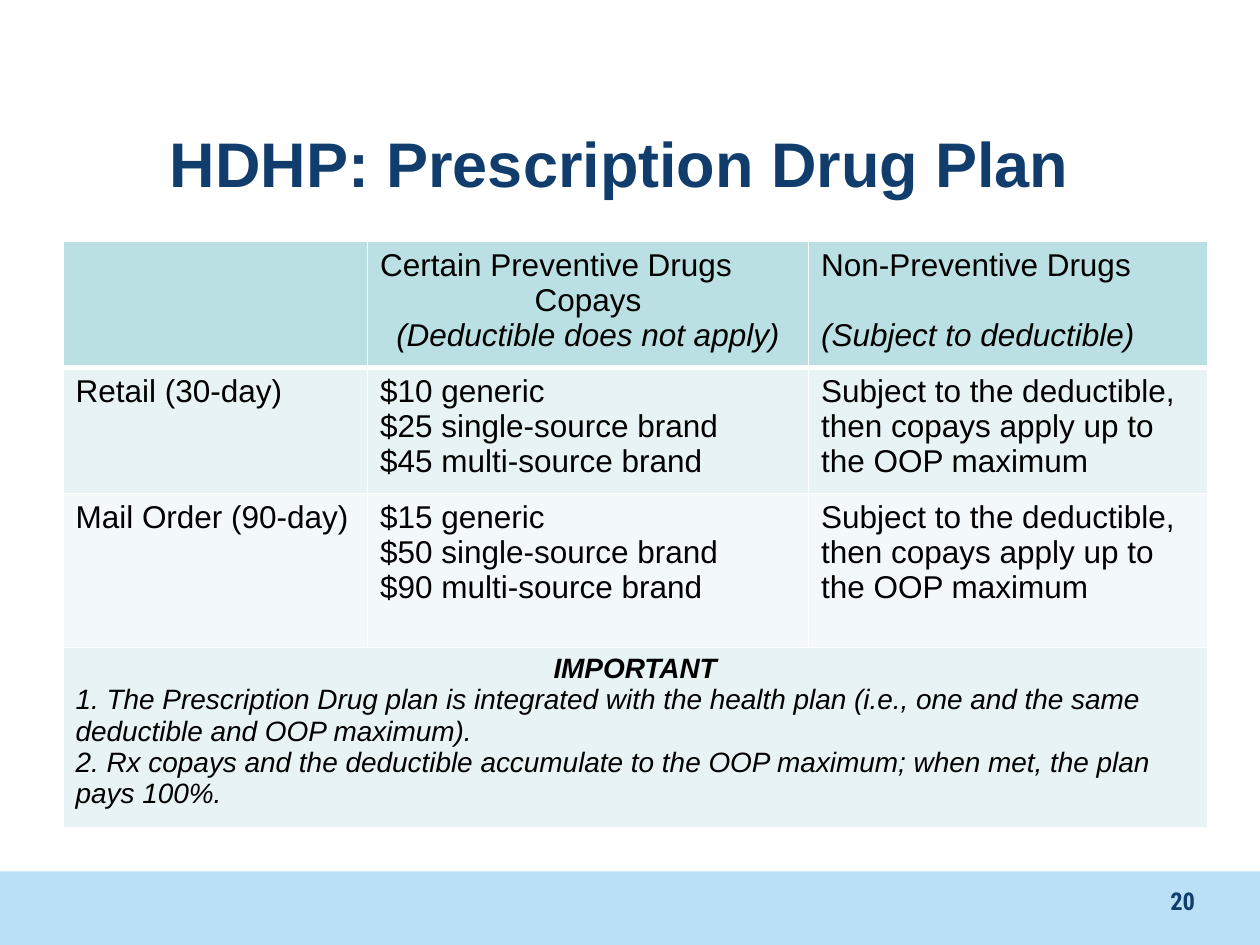
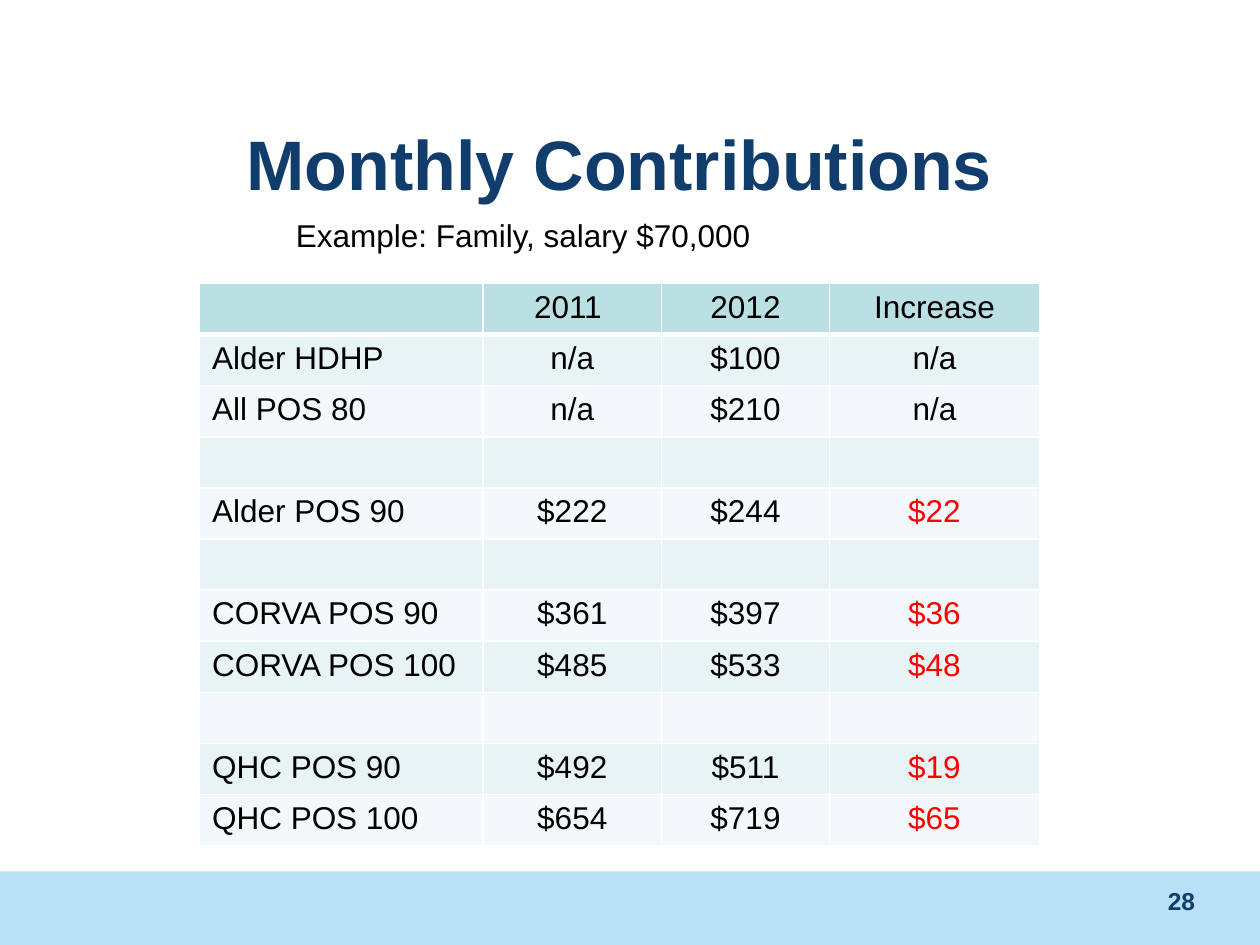
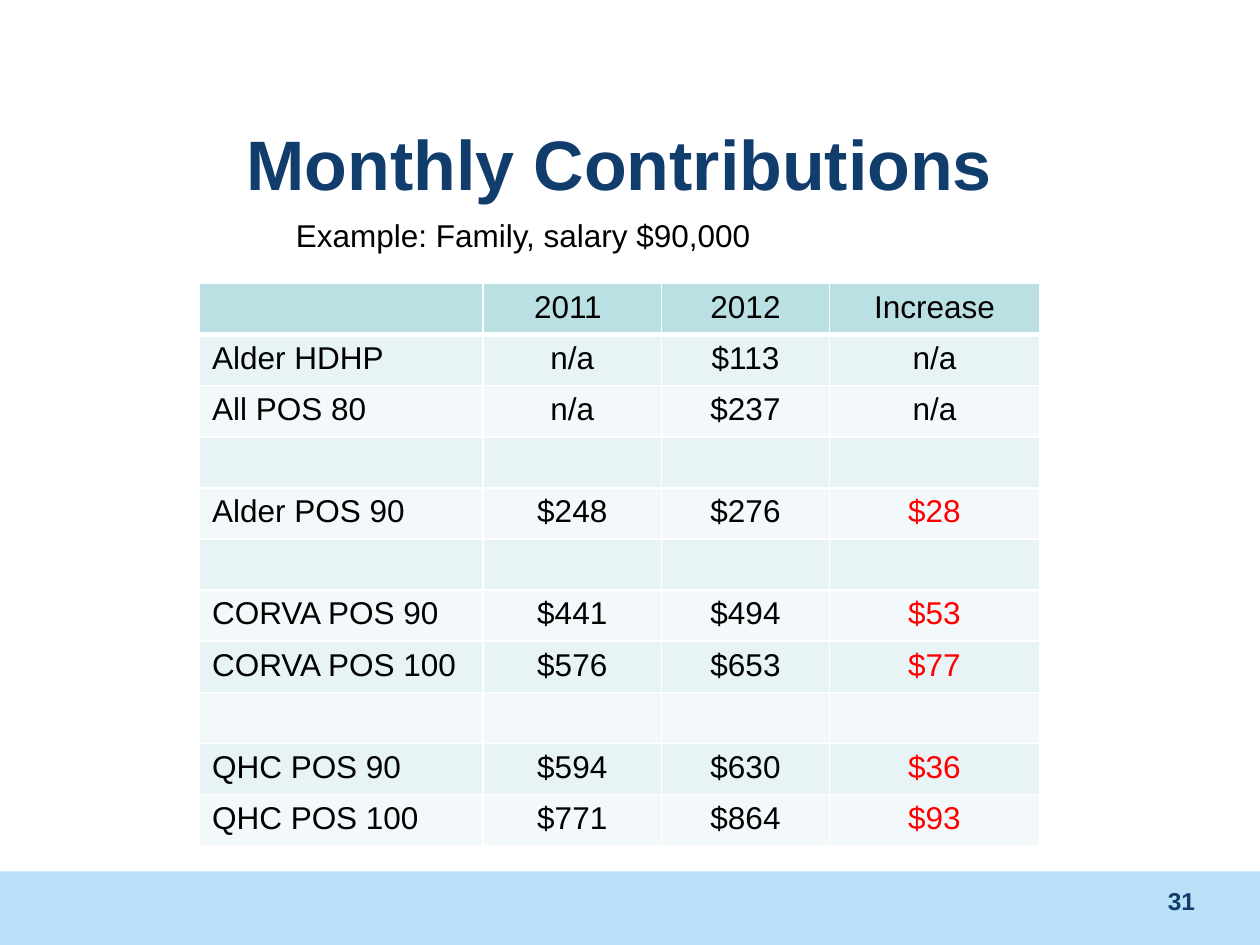
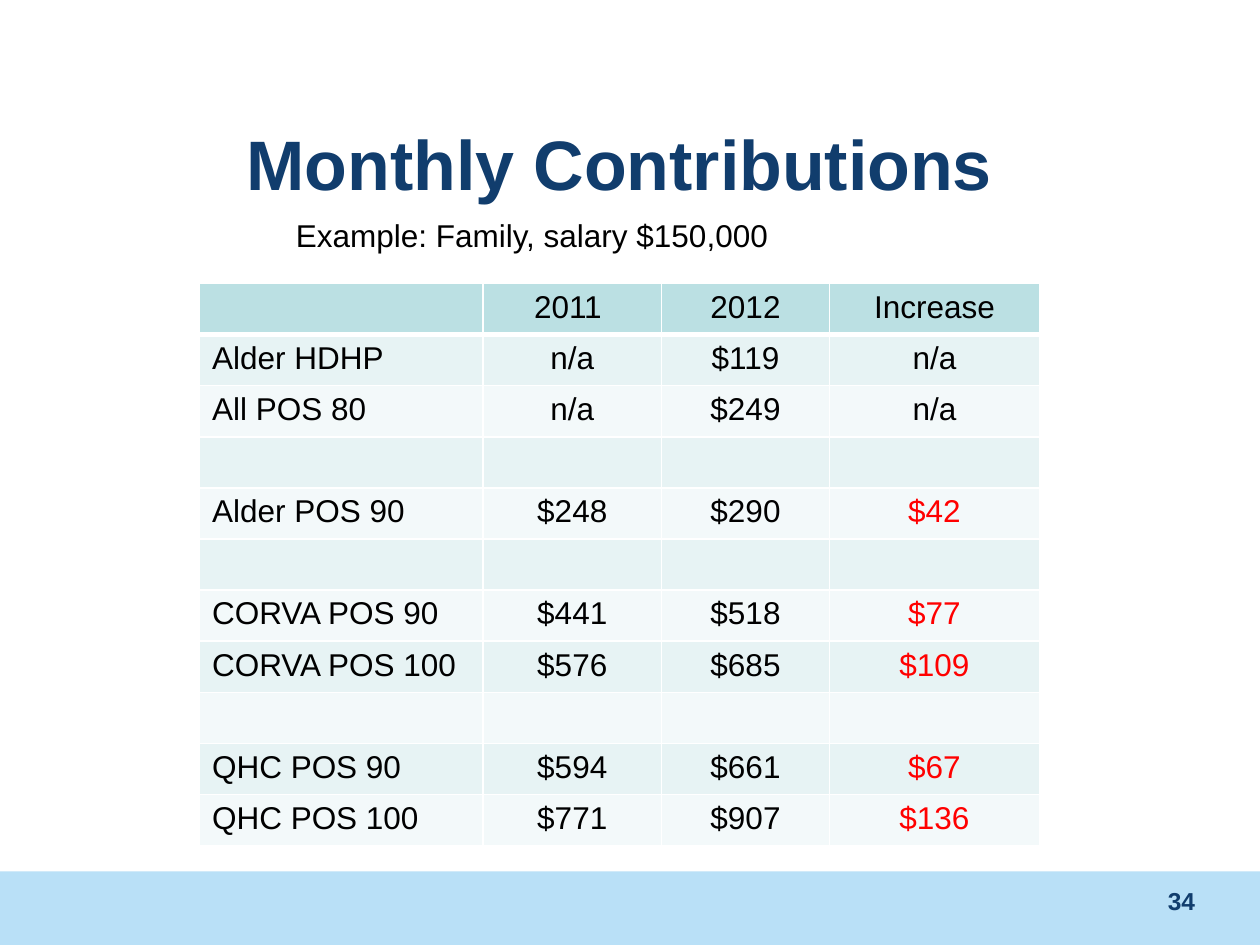
"""Build four benefit-plan slides: a drug plan table and three contribution tables."""
from dataclasses import dataclass

from lxml import etree
from pptx import Presentation
from pptx import util as u
from pptx.dml.color import RGBColor
from pptx.enum import shapes, text
from pptx.oxml import ns

COLORS = {
    "navy": "113D6D",
    "band": "B9E0F7",
    "header": "BBE0E3",
    "odd": "E7F3F4",
    "even": "F3F9FA",
    "rule": "FFFFFF",
    "body": "000000",
    "rise": "FF0000",
}
COLUMNS, ROWS = 120, 90
UNIT = u.Inches(10) // COLUMNS
FONT = "Arial"
LEFT, CENTER, RIGHT = text.PP_ALIGN.LEFT, text.PP_ALIGN.CENTER, text.PP_ALIGN.RIGHT

PLANS = ["Alder HDHP", "All POS 80", None, "Alder POS 90", None, "CORVA POS 90",
         "CORVA POS 100", None, "QHC POS 90", "QHC POS 100"]
CONTRIBUTIONS = [
    (28, "$70,000", [None, None, 222, 361, 485, 492, 654], [100, 210, 244, 397, 533, 511, 719]),
    (31, "$90,000", [None, None, 248, 441, 576, 594, 771], [113, 237, 276, 494, 653, 630, 864]),
    (34, "$150,000", [None, None, 248, 441, 576, 594, 771], [119, 249, 290, 518, 685, 661, 907]),
]


@dataclass
class Line:
    """One paragraph and its look."""
    words: str
    align: int = LEFT
    size: int = 18
    color: str = "body"
    bold: bool = False
    italic: bool = False
    font: str = FONT
    before: int = 0


def grid(*cells):
    """Turn grid units into lengths."""
    return [u.Emu(round(cell * UNIT)) for cell in cells]


def rgb(name):
    """Look up a colour by name."""
    return RGBColor.from_string(COLORS[name])


def write(frame, lines):
    """Fill a text frame with one paragraph per line."""
    for index, line in enumerate(lines):
        para = frame.add_paragraph() if index else frame.paragraphs[0]
        para.text = line.words
        para.alignment = line.align
        if line.before:
            para.space_before = u.Pt(line.before)
        font = para.font
        font.name, font.size = line.font, u.Pt(line.size)
        font.bold, font.italic = line.bold, line.italic
        font.color.rgb = rgb(line.color)


def add_text(page, place, line, anchor=text.MSO_ANCHOR.TOP):
    """Add a wrapping text box with one line."""
    frame = page.shapes.add_textbox(*grid(*place)).text_frame
    frame.word_wrap = True
    frame.vertical_anchor = anchor
    write(frame, [line])


def add_page(deck, title, title_size, number, number_font=FONT):
    """Add a slide with the shared band, title and page number."""
    page = deck.slides.add_slide(deck.slide_layouts[6])
    band = page.shapes.add_shape(shapes.MSO_SHAPE.RECTANGLE, *grid(0, 83, COLUMNS, 7))
    band.shadow.inherit = False
    band.fill.solid()
    band.fill.fore_color.rgb = rgb("band")
    band.line.fill.background()
    add_text(page, (5, 8, 108, 15), Line(title, CENTER, title_size, "navy", True),
             text.MSO_ANCHOR.MIDDLE)
    add_text(page, (87, 83.75, 28, 6.25),
             Line(str(number), RIGHT, 14, "navy", True, font=number_font))
    return page


def add_borders(cell, bottom):
    """Draw white rules round a cell, with the given width below."""
    properties = cell._tc.get_or_add_tcPr()
    for index, (side, points) in enumerate(zip("LRTB", (1, 1, 1, bottom))):
        rule = etree.Element(ns.qn(f"a:ln{side}"), w=str(u.Pt(points)))
        fill = etree.SubElement(rule, ns.qn("a:solidFill"))
        etree.SubElement(fill, ns.qn("a:srgbClr"), val=COLORS["rule"])
        properties.insert(index, rule)


def add_table(page, left, top, widths, heights, rows):
    """Add a banded table from rows of cells, each a list of lines."""
    place = grid(left, top, sum(widths), sum(heights))
    table = page.shapes.add_table(len(heights), len(widths), *place).table
    table.first_row = table.horz_banding = False
    for column, width in zip(table.columns, grid(*widths)):
        column.width = width
    for index, (row, height, lines) in enumerate(zip(table.rows, grid(*heights), rows)):
        row.height = height
        shade = "header" if index == 0 else "odd" if index % 2 else "even"
        for cell, content in zip(row.cells, lines):
            cell.fill.solid()
            cell.fill.fore_color.rgb = rgb(shade)
            add_borders(cell, 1 if index else 3)
            write(cell.text_frame, content)
    return table


def drug_page(deck):
    """Add the prescription drug plan slide."""
    page = add_page(deck, "HDHP: Prescription Drug Plan", 36, 20, "Roboto Condensed")
    subject = [Line("Subject to the deductible, then copays apply up to the OOP maximum")]

    def copays(generic, single, multi):
        return [Line(f"${generic} generic"), Line(f"${single} single-source brand"),
                Line(f"${multi} multi-source brand")]

    notes = [
        Line("IMPORTANT", CENTER, 16, bold=True, italic=True),
        Line("1. The Prescription Drug plan is integrated with the health plan "
             "(i.e., one and the same deductible and OOP maximum).", size=16, italic=True),
        Line("2. Rx copays and the deductible accumulate to the OOP maximum; "
             "when met, the plan pays 100%.", size=16, italic=True),
    ]
    rows = [
        [[],
         [Line("Certain Preventive Drugs"), Line("Copays", CENTER),
          Line("(Deductible does not apply)", CENTER, italic=True)],
         [Line("Non-Preventive Drugs"),
          Line("(Subject to deductible)", italic=True, before=20)]],
        [[Line("Retail (30-day)")], copays(10, 25, 45), subject],
        [[Line("Mail Order (90-day)")], copays(15, 50, 90), subject],
        [notes, [], []],
    ]
    table = add_table(page, 6, 23, (29, 42, 38), (11.25, 11.25, 14.65, 16), rows)
    table.cell(3, 0).merge(table.cell(3, 2))


def contribution_rows(old, new):
    """Yield the header and plan rows, working out each increase."""
    yield [[]] + [[Line(head, CENTER)] for head in ("2011 ", "2012", "Increase")]
    amounts = zip(old, new)
    for plan in PLANS:
        if plan is None:
            yield [[]] * 4
            continue
        before, after = next(amounts)
        known = before is not None
        yield [
            [Line(plan)],
            [Line(f"${before}" if known else "n/a", CENTER)],
            [Line(f"${after}", CENTER)],
            [Line(f"${after - before}", CENTER, color="rise") if known else Line("n/a", CENTER)],
        ]


def contribution_page(deck, number, salary, old, new):
    """Add a monthly contributions slide for one salary."""
    page = add_page(deck, "Monthly Contributions", 40, number)
    rows = list(contribution_rows(old, new))
    add_table(page, 19, 27, (27, 17, 16, 20), [4.87] * len(rows), rows)
    add_text(page, (27, 20, 63, 4.8), Line(f"Example: Family, salary {salary}"))


def main():
    """Build and save the deck."""
    deck = Presentation()
    deck.slide_width, deck.slide_height = grid(COLUMNS, ROWS)
    drug_page(deck)
    for example in CONTRIBUTIONS:
        contribution_page(deck, *example)
    deck.save("out.pptx")


if __name__ == "__main__":
    main()
